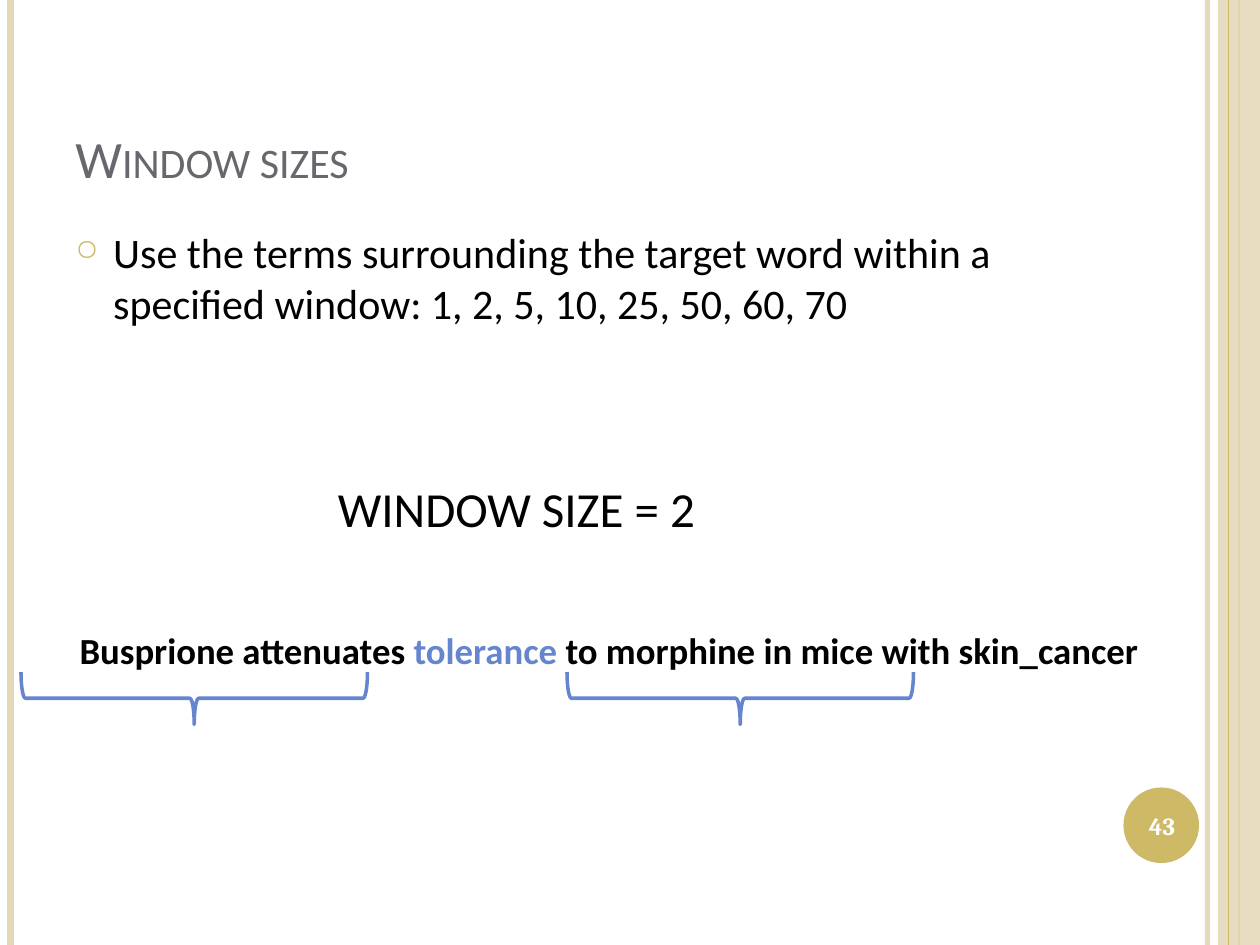
from lxml import etree
from pptx import Presentation
from pptx import util as u
from pptx.dml.color import RGBColor
from pptx.enum import shapes, text
from pptx.oxml.ns import qn

Pt = u.Pt
SAND, GOLD, BLUE, BLACK = "E3D9B8", "CEB966", "6585CF", "000000"


def color(value):
    return RGBColor.from_string(value)


def add_text(box, runs, size, font="Calibri", bold=False, align=text.PP_ALIGN.LEFT,
             anchor=text.MSO_ANCHOR.TOP, wrap=True):
    left, top, width, height = map(Pt, box)
    shape = slide.shapes.add_textbox(left, top, width, height)
    frame = shape.text_frame
    frame.word_wrap = wrap
    frame.vertical_anchor = anchor
    paragraph = frame.paragraphs[0]
    paragraph.alignment = align
    for words, run_color in runs:
        run = paragraph.add_run()
        run.text = words
        run.font.name = font
        run.font.size = Pt(size)
        run.font.bold = bold
        run.font.color.rgb = color(run_color)
    return shape


presentation = Presentation()
presentation.slide_width, presentation.slide_height = Pt(720), Pt(540)
slide = presentation.slides.add_slide(presentation.slide_layouts[6])

# Side stripes: x, colour, width, opacity in percent; the band has no line width
stripes = [
    (690, SAND, 3, 93),
    (6, SAND, 4.5, 100),
    (708, GOLD, 1.5, 100),
    (696, SAND, None, 87),
    (702, GOLD, 0.75, 100),
]
for x, stripe_color, width, opacity in stripes:
    if width is None:
        stripe = slide.shapes.add_shape(shapes.MSO_SHAPE.RECTANGLE, Pt(x), 0, Pt(24), Pt(540))
        stripe.shadow.inherit = False
        stripe.line.fill.background()
        fill = stripe.fill
    else:
        stripe = slide.shapes.add_connector(shapes.MSO_CONNECTOR.STRAIGHT, Pt(x), 0, Pt(x), Pt(540))
        stripe.line.width = Pt(width)
        fill = stripe.line.fill
    fill.solid()
    fill.fore_color.rgb = color(stripe_color)
    properties = stripe._element.spPr
    if width is not None:
        etree.SubElement(properties, qn("a:effectLst"))
    if opacity < 100:
        tint = next(properties.iter(qn("a:srgbClr")))
        etree.SubElement(tint, qn("a:alpha"), val=str(opacity * 1000))

# Page number disc
disc = slide.shapes.add_shape(shapes.MSO_SHAPE.OVAL, Pt(642), Pt(450), Pt(43.2), Pt(43.2))
disc.shadow.inherit = False
disc.fill.solid()
disc.fill.fore_color.rgb = color(GOLD)
disc.line.fill.background()

# Title in small capitals
title = add_text((36, 21.6, 588, 90), [("Window sizes", "69676D")], 30,
                 anchor=text.MSO_ANCHOR.BOTTOM)
title.text_frame.paragraphs[0].runs[0].font._element.set("cap", "small")

# Bulleted body
body = add_text((36, 126, 588, 384), [
    ("Use the terms surrounding the target word within a specified window: "
     "1, 2, 5, 10, 25, 50, 60, 70", BLACK)], 24)
paragraph = body.text_frame.paragraphs[0]
paragraph.space_before = Pt(6)
bullet = paragraph._p.get_or_add_pPr()
bullet.set("marL", str(Pt(21.6)))
bullet.set("indent", str(-Pt(21.6)))
bullet_color = etree.SubElement(bullet, qn("a:buClr"))
etree.SubElement(bullet_color, qn("a:srgbClr"), val=GOLD)
etree.SubElement(bullet, qn("a:buSzPct"), val="70000")
etree.SubElement(bullet, qn("a:buChar"), char="○")

# Example sentence with the target word highlighted
sentence = add_text((24, 354, 648, 54.7), [
    ("Busprione attenuates ", BLACK),
    ("tolerance", BLUE),
    (" to morphine in mice with skin_cancer", BLACK),
], 21, bold=True, align=text.PP_ALIGN.CENTER, wrap=False)
frame = sentence.text_frame
frame.margin_left = frame.margin_right = Pt(6.5)
frame.margin_top, frame.margin_bottom = Pt(5), Pt(3)

# Braces under the two words on each side of the target
for x in (96, 408):
    brace = slide.shapes.add_shape(shapes.MSO_SHAPE.LEFT_BRACE, Pt(x), Pt(300), Pt(30), Pt(198))
    brace.rotation = 270
    brace.shadow.inherit = False
    brace.fill.background()
    brace.line.color.rgb = color(BLUE)
    brace.line.width = Pt(2)

# Window size label and page number
add_text((186, 270, 282, 41), [("WINDOW SIZE = 2", BLACK)], 28)
add_text((640, 451.5, 48, 41), [("43", "FFFFFF")], 14, font="Cambria", bold=True,
         align=text.PP_ALIGN.CENTER, anchor=text.MSO_ANCHOR.MIDDLE)

presentation.save("out.pptx")
